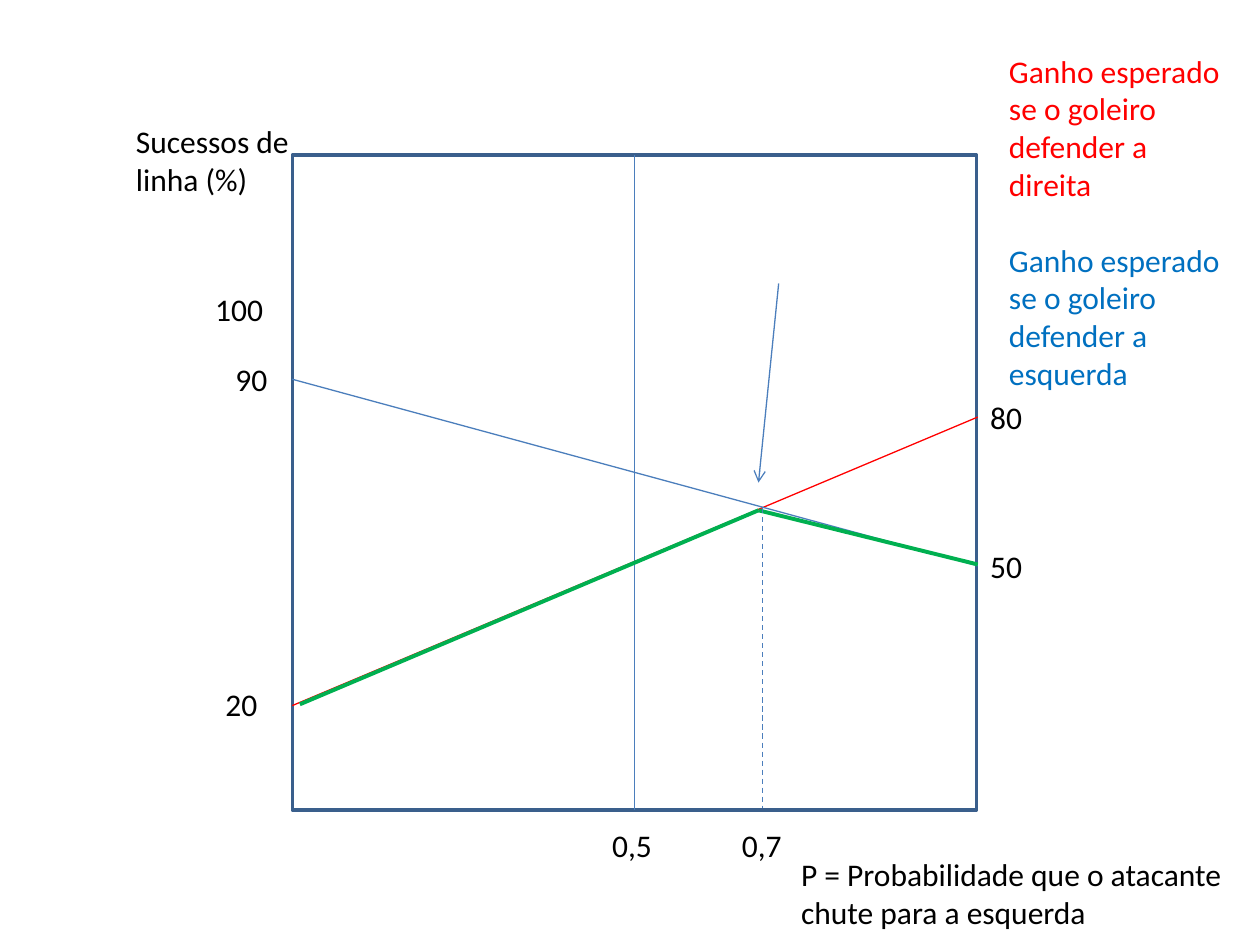
from dataclasses import dataclass

from lxml import etree
from pptx import Presentation, util as u
from pptx.dml.color import RGBColor
from pptx.enum import dml, shapes, text
from pptx.oxml import ns

COLS, ROWS = 100, 75
WIDTH, HEIGHT = u.Inches(10), u.Inches(7.5)
COLORS = {
    "frame": "3A5F8C",
    "left": "4B7EBC",
    "right": "FF0000",
    "best": "00B050",
    "left_text": "0070C0",
    "ink": "000000",
}


@dataclass(frozen=True)
class Label:
    words: str
    col: float
    row: float
    cols: float = 5.5
    rows: float = 4
    color: str = "ink"


@dataclass(frozen=True)
class Segment:
    start: tuple[float, float]
    end: tuple[float, float]
    color: str = "left"
    weight: float = 0.75
    dashed: bool = False
    arrow: bool = False


PLOT_LEFT, PLOT_TOP, PLOT_COLS, PLOT_ROWS = 23.2, 12.3, 54.3, 52
PLOT_RIGHT = 77.6
PEAK = (60.2, 40.5)
TICK_ROW = 65.1

SEGMENTS = [
    Segment((PLOT_LEFT, 56), (PLOT_RIGHT, 33.1), "right"),
    Segment((PLOT_LEFT, 30.1), (PLOT_RIGHT, 44.9)),
    Segment((23.8, 55.9), PEAK, "best", 2.25),
    Segment(PEAK, (PLOT_RIGHT, 44.8), "best", 2.25),
    Segment((61.8, 22.5), (60.2, 38.3), arrow=True),
    Segment((60.5, 40.3), (60.5, 64.1), dashed=True),
]

LABELS = [
    Label("Sucessos de linha (%)", 9.8, 9.2, 14.2, 7.1),
    Label("100", 16.1, 22.5, 9.4),
    Label("90", 17.7, 28.1),
    Label("20", 16.9, 53.9),
    Label("80", PLOT_RIGHT, 31.1),
    Label("50", PLOT_RIGHT, 42.9),
    Label("0,5", 47.6, TICK_ROW, 7.1),
    Label("0,7", 57.9, TICK_ROW, 7.1),
    Label("P = Probabilidade que o atacante chute para a esquerda",
          62.6, 67.4, 37, 7.1),
    Label("Ganho esperado se o goleiro defender a direita",
          79.1, 3.6, 19.7, 13.1, "right"),
    Label("Ganho esperado se o goleiro defender a esquerda",
          79.1, 18.6, 19.7, 13.1, "left_text"),
]


def x(col: float) -> int:
    return round(WIDTH * col / COLS)


def y(row: float) -> int:
    return round(HEIGHT * row / ROWS)


def rgb(name: str) -> RGBColor:
    return RGBColor.from_string(COLORS[name])


def write(frame, words: str, *, size: float = 18, color: str = "ink",
          font: str = "Calibri") -> None:
    frame.word_wrap = True
    frame.auto_size = text.MSO_AUTO_SIZE.SHAPE_TO_FIT_TEXT
    run = frame.paragraphs[0].add_run()
    run.text = words
    run.font.size = u.Pt(size)
    run.font.name = font
    run.font.color.rgb = rgb(color)


def draw_label(slide, label: Label) -> None:
    box = slide.shapes.add_textbox(
        x(label.col), y(label.row), x(label.cols), y(label.rows))
    write(box.text_frame, label.words, color=label.color)


def draw_plot(slide):
    plot = slide.shapes.add_shape(
        shapes.MSO_SHAPE.RECTANGLE,
        x(PLOT_LEFT), y(PLOT_TOP), x(PLOT_COLS), y(PLOT_ROWS))
    plot.shadow.inherit = False
    plot.fill.background()
    plot.line.color.rgb = rgb("frame")
    plot.line.width = u.Pt(2)
    return plot


def draw_segment(slide, segment: Segment):
    (x1, y1), (x2, y2) = segment.start, segment.end
    connector = slide.shapes.add_connector(
        shapes.MSO_CONNECTOR.STRAIGHT, x(x1), y(y1), x(x2), y(y2))
    connector.line.color.rgb = rgb(segment.color)
    connector.line.width = u.Pt(segment.weight)
    if segment.dashed:
        connector.line.dash_style = dml.MSO_LINE.DASH
    if segment.arrow:
        etree.SubElement(connector.line._get_or_add_ln(),
                         ns.qn("a:tailEnd"), type="arrow")
    etree.SubElement(connector._element.spPr, ns.qn("a:effectLst"))
    return connector


def draw_midline(slide, plot) -> None:
    center = PLOT_LEFT + PLOT_COLS / 2
    midline = draw_segment(slide, Segment(
        (center, PLOT_TOP), (center, PLOT_TOP + PLOT_ROWS)))
    midline.begin_connect(plot, 0)
    midline.end_connect(plot, 2)


def main() -> None:
    deck = Presentation()
    deck.slide_width, deck.slide_height = WIDTH, HEIGHT
    slide = deck.slides.add_slide(deck.slide_layouts[6])
    plot = draw_plot(slide)
    draw_midline(slide, plot)
    for segment in SEGMENTS:
        draw_segment(slide, segment)
    for label in LABELS:
        draw_label(slide, label)
    deck.save("out.pptx")


if __name__ == "__main__":
    main()
